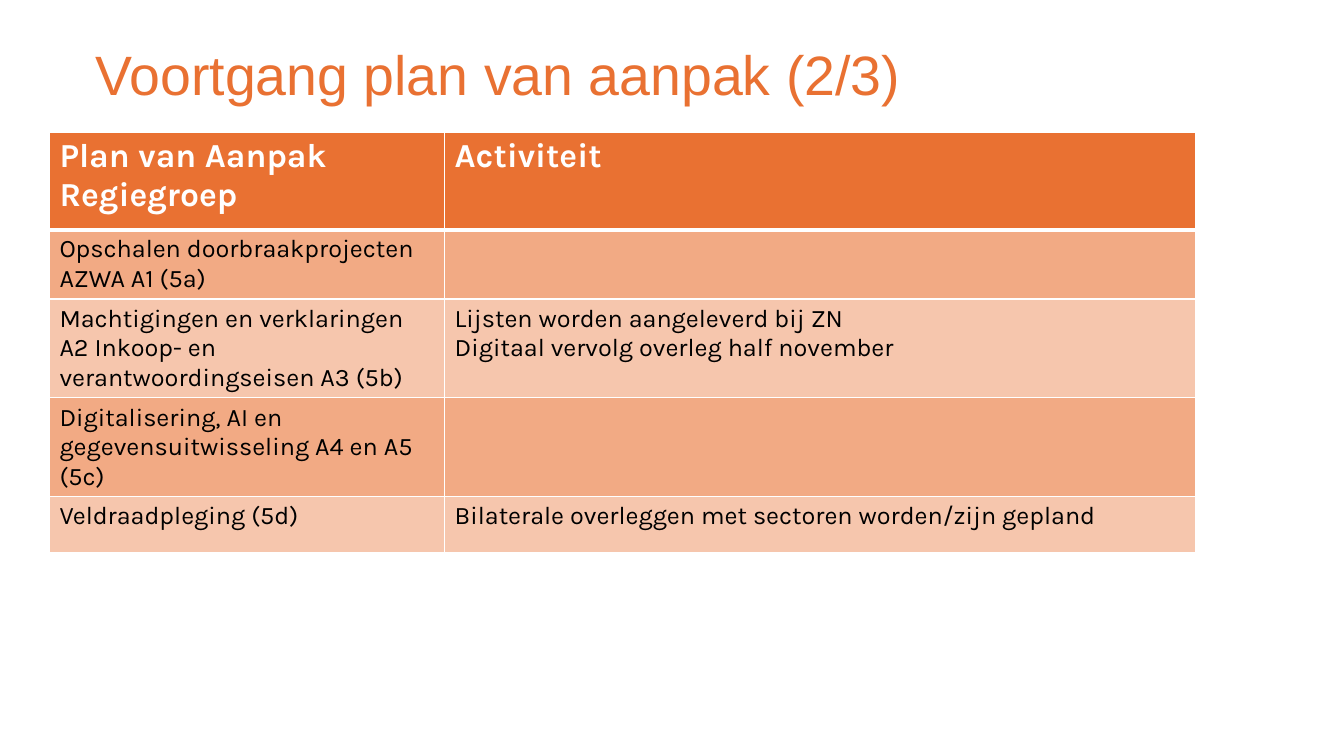
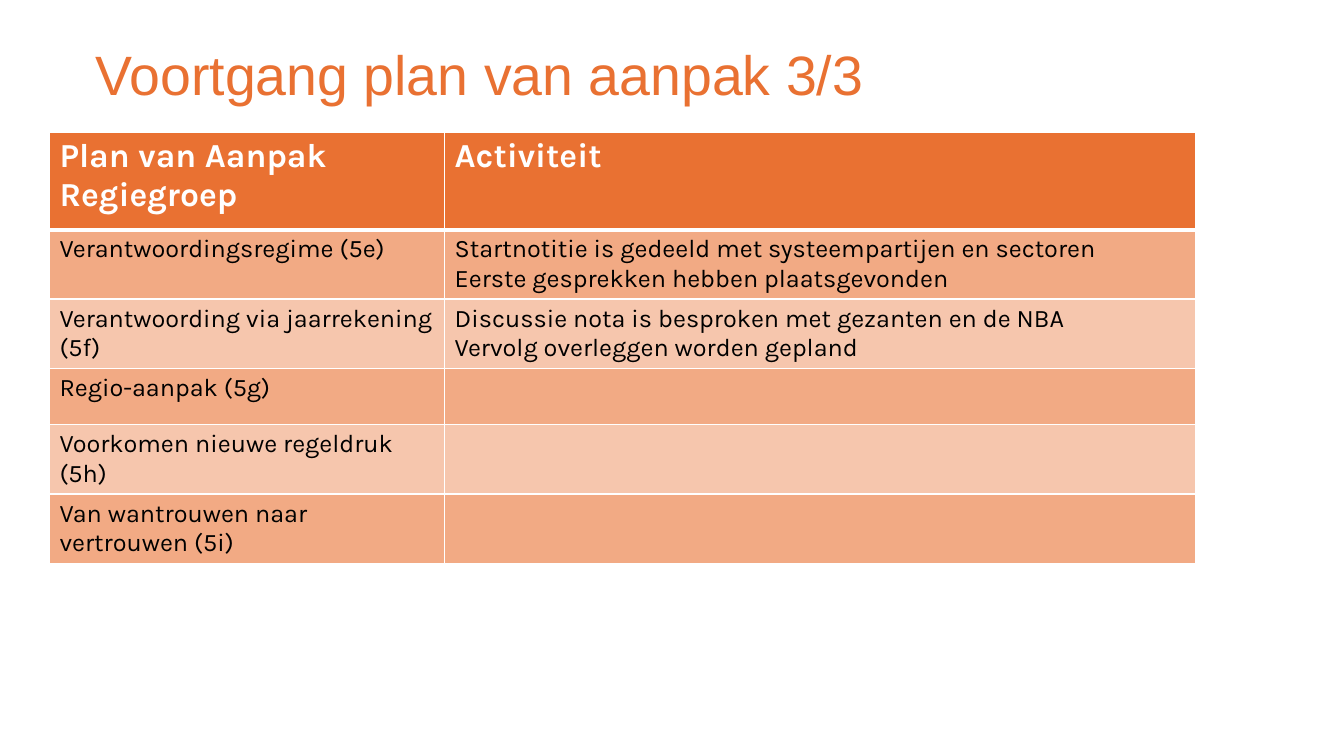
from dataclasses import dataclass

from lxml.etree import SubElement
from pptx import Presentation
from pptx.dml.color import RGBColor
from pptx.enum.text import MSO_ANCHOR, MSO_AUTO_SIZE, PP_ALIGN
from pptx.oxml.ns import qn
from pptx.presentation import Presentation as Deck
from pptx.slide import Slide
from pptx.table import _Cell
from pptx.util import Inches, Pt

ORANGE, WHITE, BLACK = "E97132", "FFFFFF", "000000"
BANDS = ("F2AA84", "F6C6AD")
TITLE_FONT, TABLE_FONT = "Arial", "Karla"
COLUMN_WIDTHS = (3.92, 7.45)
HEADER_HEIGHT, ROW_HEIGHT = 0.97, 0.56
TITLE_ONLY_LAYOUT = 5


@dataclass(frozen=True)
class PlanItem:
    topic: str
    activity: str = ""


@dataclass(frozen=True)
class ProgressSlide:
    title: str
    items: tuple[PlanItem, ...]


HEADINGS = PlanItem("Plan van Aanpak Regiegroep", "Activiteit")

PROGRESS = (
    ProgressSlide("Voortgang plan van aanpak (2/3)", (
        PlanItem("Opschalen doorbraakprojecten AZWA A1 (5a)"),
        PlanItem("Machtigingen en verklaringen A2 Inkoop- en verantwoordingseisen A3 (5b)",
                 "Lijsten worden aangeleverd bij ZN\nDigitaal vervolg overleg half november"),
        PlanItem("Digitalisering, AI en gegevensuitwisseling A4 en A5 (5c)"),
        PlanItem("Veldraadpleging (5d)",
                 "Bilaterale overleggen met sectoren worden/zijn gepland"),
    )),
    ProgressSlide("Voortgang plan van aanpak 3/3", (
        PlanItem("Verantwoordingsregime (5e)",
                 "Startnotitie is gedeeld met systeempartijen en sectoren\n"
                 "Eerste gesprekken hebben plaatsgevonden"),
        PlanItem("Verantwoording via jaarrekening (5f)",
                 "Discussie nota is besproken met gezanten en de NBA\n"
                 "Vervolg overleggen worden gepland"),
        PlanItem("Regio-aanpak (5g)"),
        PlanItem("Voorkomen nieuwe regeldruk (5h)"),
        PlanItem("Van wantrouwen naar vertrouwen (5i)"),
    )),
)


def color(value: str) -> RGBColor:
    return RGBColor.from_string(value)


def add_title(slide: Slide, wording: str) -> None:
    title = slide.shapes.title
    title.left, title.top = Inches(0.85), Inches(0.39)
    title.width, title.height = Inches(9.4), Inches(0.75)
    frame = title.text_frame
    frame.text = wording
    frame.word_wrap = True
    frame.auto_size = MSO_AUTO_SIZE.NONE
    frame.vertical_anchor = MSO_ANCHOR.MIDDLE
    paragraph = frame.paragraphs[0]
    paragraph.alignment = PP_ALIGN.LEFT
    paragraph.line_spacing = 0.9
    font = paragraph.runs[0].font
    font.name, font.size = TITLE_FONT, Pt(39.6)
    font.color.rgb = color(ORANGE)


def add_borders(cell: _Cell, row: int) -> None:
    """Draw white borders, with a heavier rule between header and body."""
    top = 3 if row == 1 else 1
    bottom = 3 if row == 0 else 1
    properties = cell._tc.get_or_add_tcPr()
    for side, points in (("L", 1), ("R", 1), ("T", top), ("B", bottom)):
        border = SubElement(properties, qn(f"a:ln{side}"), w=str(Pt(points)))
        SubElement(SubElement(border, qn("a:solidFill")), qn("a:srgbClr"), val=WHITE)


def fill_cell(cell: _Cell, wording: str, row: int) -> None:
    is_header = row == 0
    add_borders(cell, row)
    cell.fill.solid()
    cell.fill.fore_color.rgb = color(ORANGE if is_header else BANDS[(row - 1) % 2])
    cell.text_frame.text = wording
    for paragraph in cell.text_frame.paragraphs:
        for run in paragraph.runs:
            run.font.name = TABLE_FONT
            run.font.size = Pt(24 if is_header else 18)
            run.font.bold = is_header
            run.font.color.rgb = color(WHITE if is_header else BLACK)


def add_plan_table(slide: Slide, items: tuple[PlanItem, ...]) -> None:
    height = HEADER_HEIGHT + ROW_HEIGHT * len(items)
    plan = slide.shapes.add_table(
        len(items) + 1, len(COLUMN_WIDTHS), Inches(0.49), Inches(1.31),
        Inches(sum(COLUMN_WIDTHS)), Inches(height)).table
    for column, width in zip(plan.columns, COLUMN_WIDTHS):
        column.width = Inches(width)
    for row, item in enumerate((HEADINGS, *items)):
        plan.rows[row].height = Inches(ROW_HEIGHT if row else HEADER_HEIGHT)
        fill_cell(plan.cell(row, 0), item.topic, row)
        fill_cell(plan.cell(row, 1), item.activity, row)


def add_progress_slide(deck: Deck, progress: ProgressSlide) -> None:
    slide = deck.slides.add_slide(deck.slide_layouts[TITLE_ONLY_LAYOUT])
    add_plan_table(slide, progress.items)
    add_title(slide, progress.title)


def main() -> None:
    deck = Presentation()
    deck.slide_width, deck.slide_height = Inches(13.33), Inches(7.5)
    for progress in PROGRESS:
        add_progress_slide(deck, progress)
    deck.save("out.pptx")


if __name__ == "__main__":
    main()
